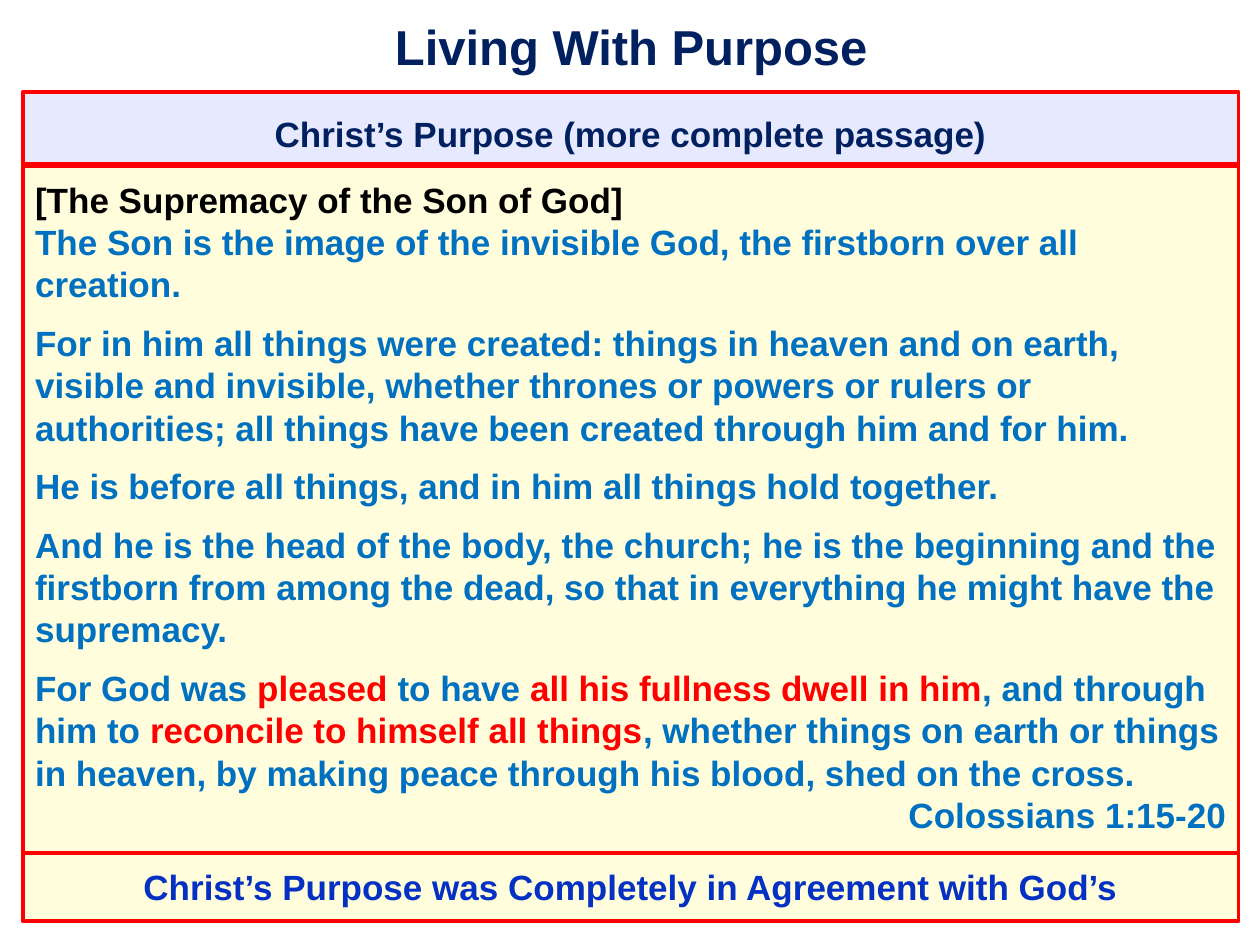
"""Build the Living With Purpose scripture slide."""
from lxml.etree import SubElement
from pptx import Presentation
from pptx.dml.color import RGBColor
from pptx.enum.shapes import MSO_SHAPE
from pptx.enum.text import MSO_ANCHOR, MSO_AUTO_SIZE, PP_ALIGN
from pptx.oxml.ns import qn
from pptx.util import Inches, Pt

NAVY = RGBColor(0x00, 0x20, 0x60)
BLUE = RGBColor(0x00, 0x70, 0xC0)
ROYAL = RGBColor(0x05, 0x30, 0xC4)
RED = RGBColor(0xFF, 0x00, 0x00)
BLACK = RGBColor(0x00, 0x00, 0x00)
LILAC = RGBColor(0xD0, 0xD6, 0xFF)
CREAM = RGBColor(0xFF, 0xFD, 0xB8)
LEFT, MID, RIGHT = PP_ALIGN.LEFT, PP_ALIGN.CENTER, PP_ALIGN.RIGHT
GAP = 9.7

TITLE = "Living With Purpose"
HEAD = [([("Christ’s Purpose (more complete passage)", NAVY)], MID, 0)]
FOOT = [([("Christ’s Purpose was Completely in Agreement with God’s", ROYAL)], MID, 0)]
VERSE = [
    ([("[The Supremacy of the Son of God]", BLACK)], LEFT, 0),
    ([("The Son is the image of the invisible God, the firstborn over all creation.", BLUE)], LEFT, 0),
    ([("For in him all things were created: things in heaven and on earth, visible and "
       "invisible, whether thrones or powers or rulers or authorities; all things have "
       "been created through him and for him.", BLUE)], LEFT, GAP),
    ([("He is before all things, and in him all things hold together.", BLUE)], LEFT, GAP),
    ([("And he is the head of the body, the church; he is the beginning and the firstborn "
       "from among the dead, so that in everything he might have the supremacy.", BLUE)], LEFT, GAP),
    ([("For God was ", BLUE), ("pleased", RED), (" to have ", BLUE),
      ("all his fullness dwell in him", RED), (", and through him to ", BLUE),
      ("reconcile to himself all things", RED),
      (", whether things on earth or things in heaven, by making peace through his blood, "
       "shed on the cross.", BLUE)], LEFT, GAP),
    ([("Colossians 1:15-20", BLUE)], RIGHT, 0),
]
PANELS = [
    (0.73, 0.57, LILAC, 28.8, HEAD),
    (6.77, 0.54, CREAM, 24, FOOT),
    (1.32, 5.45, CREAM, 24, VERSE),
]


def style(font, size, color):
    font.name, font.size, font.bold = "Arial", Pt(size), True
    font.color.rgb = color


def place(shape, left, top, width, height):
    shape.left, shape.top = Inches(left), Inches(top)
    shape.width, shape.height = Inches(width), Inches(height)


def pad(frame, left, top, right, bottom):
    frame.margin_left, frame.margin_top = Inches(left), Inches(top)
    frame.margin_right, frame.margin_bottom = Inches(right), Inches(bottom)
    frame.word_wrap = True
    frame.auto_size = MSO_AUTO_SIZE.NONE


def add_panel(slide, top, height, tint, pitch, lines):
    box = slide.shapes.add_shape(
        MSO_SHAPE.RECTANGLE, Inches(0.18), Inches(top), Inches(9.65), Inches(height))
    box.shadow.inherit = False
    box.fill.solid()
    box.fill.fore_color.rgb = tint
    color = box.fill._xPr.find(qn("a:solidFill"))[0]
    SubElement(color, qn("a:alpha"), val="50000")
    box.line.color.rgb = RED
    box.line.width = Pt(2.25)
    frame = box.text_frame
    pad(frame, 0.1, 0.1, 0.1, 0.1)
    frame.vertical_anchor = MSO_ANCHOR.TOP
    for i, (runs, align, gap) in enumerate(lines):
        para = frame.add_paragraph() if i else frame.paragraphs[0]
        para.alignment = align
        para.line_spacing = Pt(pitch)
        para.space_before = Pt(gap)
        for text, hue in runs:
            run = para.add_run()
            run.text = text
            style(run.font, 20, hue)


def main():
    deck = Presentation()
    deck.slide_width, deck.slide_height = Inches(10), Inches(7.5)
    slide = deck.slides.add_slide(deck.slide_layouts[5])
    title = slide.shapes.title
    place(title, 0.14, 0.02, 9.78, 0.69)
    frame = title.text_frame
    frame.text = TITLE
    pad(frame, 0.1, 0.06, 0.14, 0.06)
    frame.vertical_anchor = MSO_ANCHOR.MIDDLE
    frame.paragraphs[0].alignment = MID
    style(frame.paragraphs[0].runs[0].font, 28, NAVY)
    for panel in PANELS:
        add_panel(slide, *panel)
    deck.save("out.pptx")


if __name__ == "__main__":
    main()
